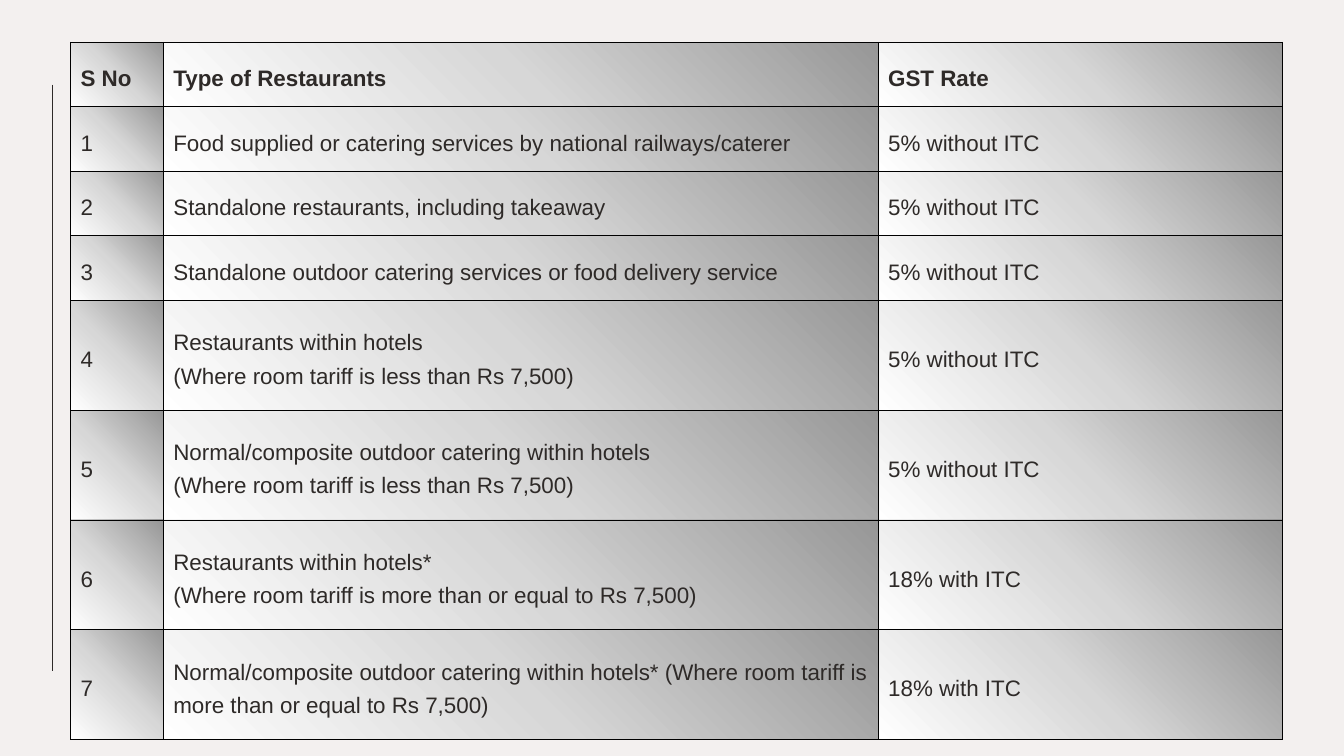
import pptx
import pptx.util
import pptx.dml.color
import pptx.enum.shapes
import pptx.enum.text
import pptx.oxml
import pptx.oxml.ns
from pptx.util import Inches

ROWS = [
    ("S No", "Type of Restaurants", "GST Rate"),
    ("1", "Food supplied or catering services by national railways/caterer", "5% without ITC"),
    ("2", "Standalone restaurants, including takeaway", "5% without ITC"),
    ("3", "Standalone outdoor catering services or food delivery service", "5% without ITC"),
    ("4", "Restaurants within hotels\v(Where room tariff is less than Rs 7,500)", "5% without ITC"),
    ("5", "Normal/composite outdoor catering within hotels\v"
          "(Where room tariff is less than Rs 7,500)", "5% without ITC"),
    ("6", "Restaurants within hotels*\v"
          "(Where room tariff is more than or equal to Rs 7,500)", "18% with ITC"),
    ("7", "Normal/composite outdoor catering within hotels* "
          "(Where room tariff is more than or equal to Rs 7,500)", "18% with ITC"),
]
COLUMN_WIDTHS = [0.92, 7.09, 4.01]
ROW_HEIGHTS = [0.64] * 4 + [1.09] * 4
TABLE_LEFT, TABLE_TOP = 0.7, 0.42

BACKGROUND = pptx.dml.color.RGBColor(0xF3, 0xF0, 0xEF)
INK = pptx.dml.color.RGBColor(0x2E, 0x2A, 0x28)
BLACK = pptx.dml.color.RGBColor(0, 0, 0)
GRADIENT = [
    (0, pptx.dml.color.RGBColor(0x97, 0x97, 0x97)),
    (50, pptx.dml.color.RGBColor(0xD7, 0xD7, 0xD7)),
    (100, pptx.dml.color.RGBColor(0xFF, 0xFF, 0xFF)),
]
NAMESPACE = pptx.oxml.ns.nsdecls("a")


def style_cell_box(cell):
    """Give a cell thin black borders and a gradient spreading from its top right corner."""
    properties = cell._tc.get_or_add_tcPr()
    for side in ("lnL", "lnR", "lnT", "lnB"):
        properties.append(pptx.oxml.parse_xml(
            f'<a:{side} {NAMESPACE} w="{pptx.util.Pt(0.75)}"><a:solidFill>'
            f'<a:srgbClr val="{BLACK}"/></a:solidFill></a:{side}>'))
    stops = "".join(
        f'<a:gs pos="{position * 1000}"><a:srgbClr val="{color}"/></a:gs>'
        for position, color in GRADIENT)
    properties.append(pptx.oxml.parse_xml(
        f'<a:gradFill {NAMESPACE} rotWithShape="1"><a:gsLst>{stops}</a:gsLst>'
        '<a:path path="circle"><a:fillToRect l="100000" b="100000"/></a:path></a:gradFill>'))


def write_cell(cell, text, bold):
    cell.margin_left = cell.margin_right = Inches(0.1)
    cell.margin_top = cell.margin_bottom = Inches(0.1)
    cell.vertical_anchor = pptx.enum.text.MSO_ANCHOR.MIDDLE
    paragraph = cell.text_frame.paragraphs[0]
    paragraph.text = text
    paragraph.line_spacing = pptx.util.Pt(24)
    for run in paragraph.runs:
        run.font.name = "Arial"
        run.font.size = pptx.util.Pt(16)
        run.font.bold = bold
        run.font.color.rgb = INK


def add_side_rule(slide):
    rule = slide.shapes.add_connector(
        pptx.enum.shapes.MSO_CONNECTOR.STRAIGHT,
        Inches(0.52), Inches(0.84), Inches(0.52), Inches(6.66))
    rule.line.color.rgb = INK
    rule.line.width = pptx.util.Pt(0.75)
    rule._element.spPr.append(pptx.oxml.parse_xml(f"<a:effectLst {NAMESPACE}/>"))


def add_rate_table(slide):
    table = slide.shapes.add_table(
        len(ROWS), len(COLUMN_WIDTHS), Inches(TABLE_LEFT), Inches(TABLE_TOP),
        Inches(sum(COLUMN_WIDTHS)), Inches(sum(ROW_HEIGHTS))).table
    table.horz_banding = False
    table.first_row = False
    for column, width in zip(table.columns, COLUMN_WIDTHS):
        column.width = Inches(width)
    for row, height in zip(table.rows, ROW_HEIGHTS):
        row.height = Inches(height)
    for row_index, texts in enumerate(ROWS):
        for column_index, text in enumerate(texts):
            cell = table.cell(row_index, column_index)
            write_cell(cell, text, bold=row_index == 0)
            style_cell_box(cell)


def main():
    presentation = pptx.Presentation()
    presentation.slide_width = Inches(13.33)
    presentation.slide_height = Inches(7.5)
    slide = presentation.slides.add_slide(presentation.slide_layouts[6])
    slide.background.fill.solid()
    slide.background.fill.fore_color.rgb = BACKGROUND
    add_side_rule(slide)
    add_rate_table(slide)
    presentation.save("out.pptx")


if __name__ == "__main__":
    main()
